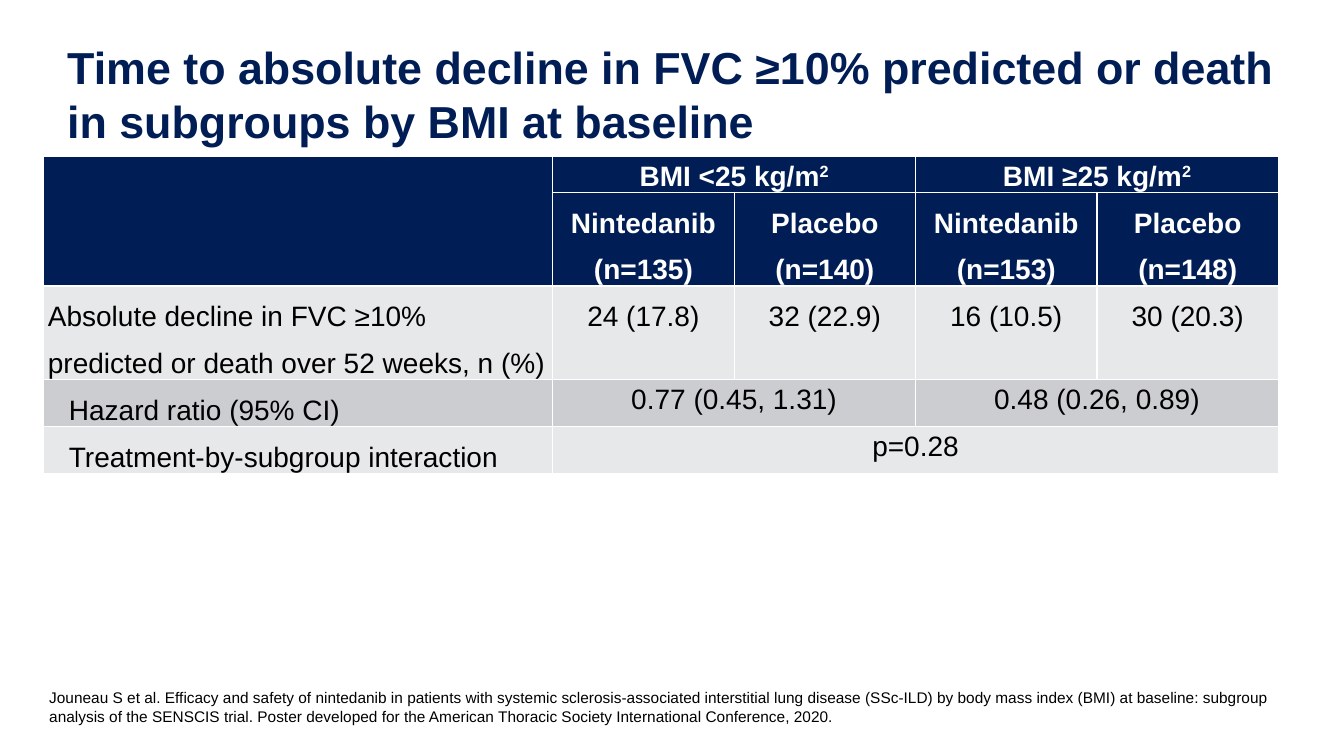
"""Build the slide on FVC decline or death in subgroups by BMI."""
import pptx
import pptx.dml.color
import pptx.enum.text
import pptx.oxml
import pptx.oxml.ns
import pptx.util

Pt = pptx.util.Pt
RGBColor = pptx.dml.color.RGBColor
Align = pptx.enum.text.PP_ALIGN
Anchor = pptx.enum.text.MSO_ANCHOR
AutoSize = pptx.enum.text.MSO_AUTO_SIZE

NAVY = RGBColor(0x00, 0x1E, 0x55)
WHITE = RGBColor(0xFF, 0xFF, 0xFF)
BLACK = RGBColor(0x00, 0x00, 0x00)
LIGHT_GREY = RGBColor(0xE7, 0xE8, 0xE9)
MID_GREY = RGBColor(0xCC, 0xCD, 0xD1)

COLUMN_WIDTHS = [363.6] + [129.6] * 4
ROW_HEIGHTS = [25, 67, 67, 33, 33]
ROW_FILLS = [NAVY, NAVY, LIGHT_GREY, MID_GREY, LIGHT_GREY]
HEADER_ROWS = 2
MERGES = [((0, 0), (1, 0)), ((0, 1), (0, 2)), ((0, 3), (0, 4)),
          ((3, 1), (3, 2)), ((3, 3), (3, 4)), ((4, 1), (4, 4))]
ROWS = [
    ["", "BMI <25 kg/m^2", "", "BMI ≥25 kg/m^2", ""],
    ["", "Nintedanib (n=135)", "Placebo (n=140)", "Nintedanib (n=153)", "Placebo (n=148)"],
    ["Absolute decline in FVC ≥10% predicted or death over 52 weeks, n (%)",
     "24 (17.8)", "32 (22.9)", "16 (10.5)", "30 (20.3)"],
    ["Hazard ratio (95% CI)", "0.77 (0.45, 1.31)", "", "0.48 (0.26, 0.89)", ""],
    ["Treatment-by-subgroup interaction", "p=0.28", "", "", ""],
]
INDENTED_ROWS = (3, 4)
TITLE = "Time to absolute decline in FVC ≥10% predicted or death in subgroups by BMI at baseline"
CITATION = (
    "Jouneau S et al. Efficacy and safety of nintedanib in patients with systemic "
    "sclerosis-associated interstitial lung disease (SSc-ILD) by body mass index (BMI) at "
    "baseline: subgroup analysis of the SENSCIS trial. Poster developed for the American "
    "Thoracic Society International Conference, 2020."
)


def apply(target, values):
    """Set each named attribute on the target."""
    for name, value in values.items():
        setattr(target, name, value)


class SlideBuilder:
    """Hold the text style and the slide being built."""

    def __init__(self, slide, font_name):
        """Keep the slide and its font."""
        self.slide = slide
        self.font_name = font_name

    def add_text(self, paragraph, text, size, color, bold=False, **layout):
        """Fill a paragraph, raising whatever follows a caret."""
        apply(paragraph, layout)
        apply(paragraph.font, {"size": Pt(size)})
        for position, part in enumerate(text.split("^") if text else []):
            run = paragraph.add_run()
            run.text = part
            apply(run.font, {"name": self.font_name, "size": Pt(size), "bold": bold})
            run.font.color.rgb = color
            if position:
                run._r.get_or_add_rPr().set("baseline", "30000")

    def title(self, text, left, top, width, height):
        """Place and format the title placeholder."""
        shape = self.slide.shapes.title
        apply(shape, {"left": Pt(left), "top": Pt(top), "width": Pt(width), "height": Pt(height)})
        apply(shape.text_frame, {
            "margin_left": 0, "margin_right": 0, "margin_top": 0, "margin_bottom": 0,
            "vertical_anchor": Anchor.MIDDLE, "word_wrap": True, "auto_size": AutoSize.NONE})
        self.add_text(shape.text_frame.paragraphs[0], text, 32, NAVY, True, alignment=Align.LEFT)

    def note(self, text, left, top, width, height):
        """Add a wrapped box of small text."""
        shape = self.slide.shapes.add_textbox(Pt(left), Pt(top), Pt(width), Pt(height))
        apply(shape.text_frame, {"word_wrap": True, "auto_size": AutoSize.SHAPE_TO_FIT_TEXT})
        self.add_text(shape.text_frame.paragraphs[0], text, 11, BLACK)

    def borders(self, cell):
        """Draw white lines on all sides of a cell."""
        properties = cell._tc.get_or_add_tcPr()
        for side in ("lnL", "lnR", "lnT", "lnB"):
            properties.append(pptx.oxml.parse_xml(
                f'<a:{side} {pptx.oxml.ns.nsdecls("a")} w="{Pt(1)}"><a:solidFill>'
                f'<a:srgbClr val="{WHITE}"/></a:solidFill></a:{side}>'))

    def cell(self, cell, text, row, column):
        """Format one table cell by its row and column."""
        header, label = row < HEADER_ROWS, column == 0
        side = Pt(3 if label else 5)
        apply(cell, {
            "margin_left": side, "margin_right": side, "margin_top": 0, "margin_bottom": 0,
            "vertical_anchor": Anchor.MIDDLE if row == 0 else Anchor.TOP})
        self.borders(cell)
        cell.fill.solid()
        cell.fill.fore_color.rgb = ROW_FILLS[row]
        paragraph = cell.text_frame.paragraphs[0]
        if label and row in INDENTED_ROWS:
            paragraph._p.get_or_add_pPr().set("marL", str(Pt(15)))
        single_line = row in (0, 3, 4) and not label
        self.add_text(paragraph, text, 20, WHITE if header else BLACK, header,
                      alignment=Align.LEFT if label else Align.CENTER,
                      line_spacing=1.15 if single_line else 1.5)

    def table(self, left, top):
        """Add the results table."""
        table = self.slide.shapes.add_table(
            len(ROWS), len(COLUMN_WIDTHS), Pt(left), Pt(top),
            Pt(sum(COLUMN_WIDTHS)), Pt(sum(ROW_HEIGHTS))).table
        apply(table, {"first_row": False, "horz_banding": False})
        for column, width in zip(table.columns, COLUMN_WIDTHS):
            column.width = Pt(width)
        for row, height in zip(table.rows, ROW_HEIGHTS):
            row.height = Pt(height)
        for row, texts in enumerate(ROWS):
            for column, text in enumerate(texts):
                self.cell(table.cell(row, column), text, row, column)
        for first, last in MERGES:
            table.cell(*first).merge(table.cell(*last))


def main():
    """Build and save the presentation."""
    presentation = pptx.Presentation()
    apply(presentation, {"slide_width": Pt(960), "slide_height": Pt(540)})
    slide = presentation.slides.add_slide(presentation.slide_layouts[5])
    builder = SlideBuilder(slide, "Arial")
    builder.title(TITLE, 48, 21.6, 864, 90)
    builder.table(31.2, 111.6)
    builder.note(CITATION, 28.1, 488.2, 916.6, 33.8)
    presentation.save("out.pptx")


if __name__ == "__main__":
    main()
